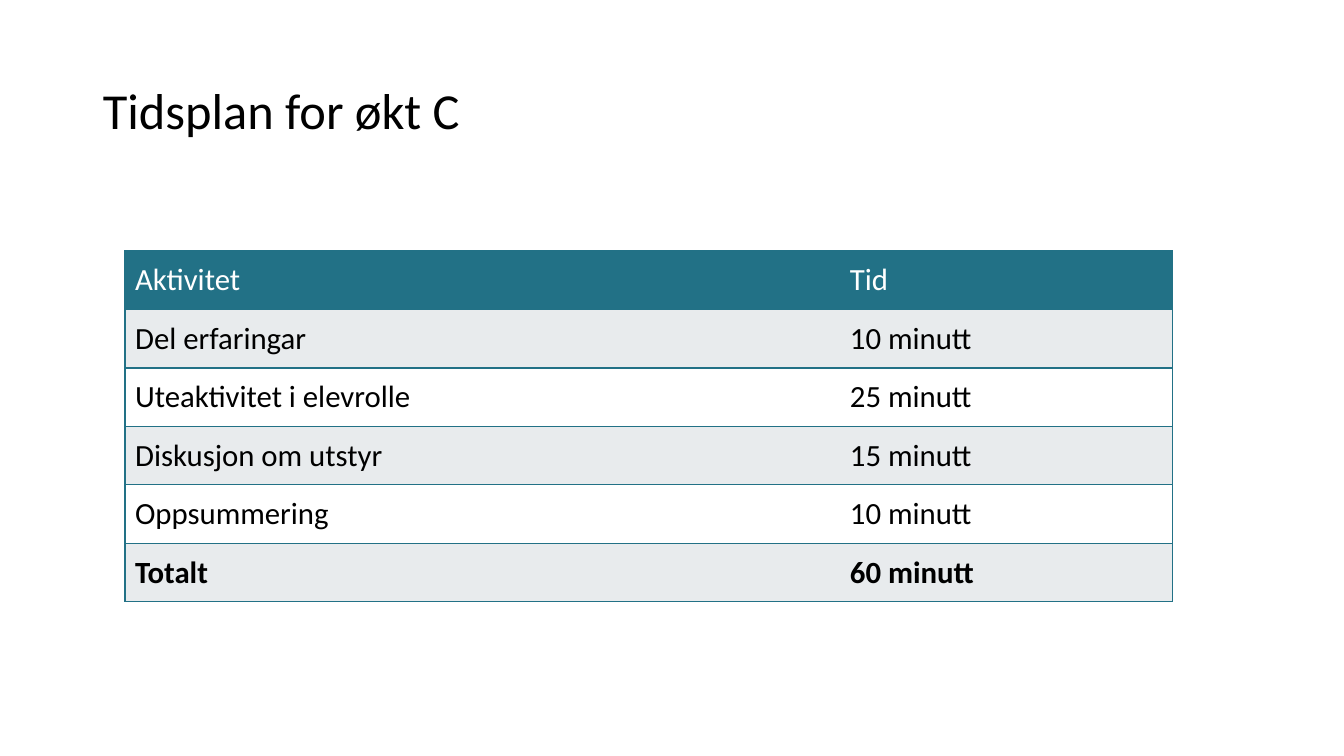
from lxml import etree
from pptx import Presentation
from pptx.dml.color import RGBColor
from pptx.enum.text import MSO_ANCHOR as Anchor, PP_ALIGN as Align
from pptx.oxml.ns import qn
from pptx.util import Inches, Pt

FONT = "Calibri"
TEAL, GREY, WHITE, BLACK = "227186", "E8EBED", "FFFFFF", "000000"
COLUMN_WIDTHS = (7.09, 3.3)
ROW_HEIGHT = 0.58
SCHEDULE = [
    ("Aktivitet", "Tid"),
    ("Del erfaringar", "10 minutt"),
    ("Uteaktivitet i elevrolle", "25 minutt"),
    ("Diskusjon om utstyr", "15 minutt"),
    ("Oppsummering", "10 minutt"),
    ("Totalt", "60 minutt"),
]


def color(value):
    return RGBColor.from_string(value)


def style_paragraph(para, size, ink, bold=False):
    para.alignment = Align.LEFT
    para.font.name = FONT
    para.font.size = Pt(size)
    para.font.bold = bold
    para.font.color.rgb = color(ink)


def add_title(page, text):
    title = page.shapes.title
    title.left, title.top = Inches(0.92), Inches(0.4)
    title.width, title.height = Inches(11.5), Inches(1.45)
    frame = title.text_frame
    frame.text = text
    frame.word_wrap = True
    frame.vertical_anchor = Anchor.MIDDLE
    para = frame.paragraphs[0]
    para.line_spacing = 0.9
    style_paragraph(para, 36, BLACK)


def set_borders(cell, visible_sides):
    """Draw the named sides (L, R, T, B) and hide the others."""
    properties = cell._tc.get_or_add_tcPr()
    for index, side in enumerate("LRTB"):
        line = etree.Element(qn(f"a:ln{side}"), w=str(Pt(1)))
        if side in visible_sides:
            fill = etree.SubElement(line, qn("a:solidFill"))
            etree.SubElement(fill, qn("a:srgbClr"), val=TEAL)
        else:
            etree.SubElement(line, qn("a:noFill"))
        properties.insert(index, line)


def fill_cell(cell, text, background, ink, bold):
    cell.text = text
    cell.vertical_anchor = Anchor.MIDDLE
    cell.margin_left = cell.margin_right = Inches(0.1)
    cell.margin_top = cell.margin_bottom = Inches(0.05)
    cell.fill.solid()
    cell.fill.fore_color.rgb = color(background)
    style_paragraph(cell.text_frame.paragraphs[0], 22, ink, bold)


def add_schedule(page, rows):
    table = page.shapes.add_table(
        len(rows), len(COLUMN_WIDTHS), Inches(1.24), Inches(2.49),
        Inches(sum(COLUMN_WIDTHS)), Inches(ROW_HEIGHT * len(rows))).table
    for column, width in zip(table.columns, COLUMN_WIDTHS):
        column.width = Inches(width)
    last = len(rows) - 1
    for r, texts in enumerate(rows):
        table.rows[r].height = Inches(ROW_HEIGHT)
        # Teal header, then alternating grey and white rows
        background = TEAL if r == 0 else GREY if r % 2 else WHITE
        ink = WHITE if r == 0 else BLACK
        for c, text in enumerate(texts):
            cell = table.cell(r, c)
            fill_cell(cell, text, background, ink, bold=r == last)
            set_borders(cell, "LTB" if c == 0 else "RTB")


def main():
    deck = Presentation()
    deck.slide_width, deck.slide_height = Inches(13.33), Inches(7.5)
    page = deck.slides.add_slide(deck.slide_layouts.get_by_name("Title Only"))
    add_title(page, "Tidsplan for økt C")
    add_schedule(page, SCHEDULE)
    deck.save("out.pptx")


if __name__ == "__main__":
    main()
